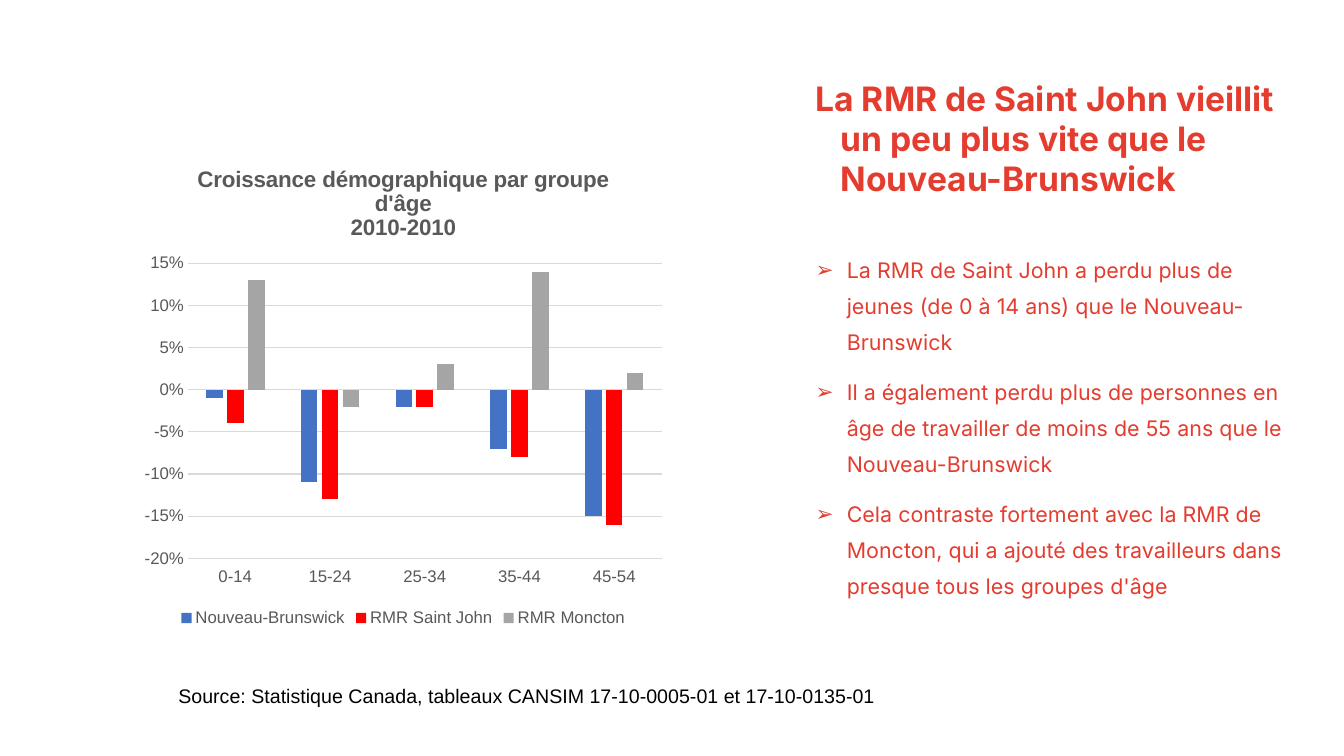
from lxml import etree
from pptx import Presentation
from pptx.chart.data import CategoryChartData
from pptx.dml.color import RGBColor
from pptx.enum import chart as charts
from pptx.oxml.ns import qn
from pptx.util import Inches, Pt

RED = RGBColor(0xE4, 0x3D, 0x30)
BLACK = RGBColor(0, 0, 0)
GREY = RGBColor(0x59, 0x59, 0x59)
LIGHT_GREY = RGBColor(0xD9, 0xD9, 0xD9)

HEADING = "La RMR de Saint John vieillit un peu plus vite que le Nouveau-Brunswick"
POINTS = [
    "La RMR de Saint John a perdu plus de jeunes (de 0 à 14 ans) que le Nouveau-Brunswick",
    "Il a également perdu plus de personnes en âge de travailler de moins de 55 ans que le Nouveau-Brunswick",
    "Cela contraste fortement avec la RMR de Moncton, qui a ajouté des travailleurs dans presque tous les groupes d'âge",
]
SOURCE = "Source: Statistique Canada, tableaux CANSIM 17-10-0005-01 et 17-10-0135-01"
CHART_TITLE = "Croissance démographique par groupe d'âge\n2010-2010"
AGE_GROUPS = ["0-14", "15-24", "25-34", "35-44", "45-54"]
SERIES = [
    ("Nouveau-Brunswick", RGBColor(0x44, 0x72, 0xC4), [-0.01, -0.11, -0.02, -0.07, -0.15]),
    ("RMR Saint John", RGBColor(0xFF, 0, 0), [-0.04, -0.13, -0.02, -0.08, -0.16]),
    ("RMR Moncton", RGBColor(0xA5, 0xA5, 0xA5), [0.13, -0.02, 0.03, 0.14, 0.02]),
]
PLOT_LAYOUT = {"x": 0.1, "y": 0.24, "w": 0.88, "h": 0.61}


def set_font(font, size, color, name="Arial", bold=False):
    font.size, font.name, font.bold = Pt(size), name, bold
    font.color.rgb = color


def add_text(slide, box, paragraphs, size, color, name="Arial", bold=False,
             margin=0, hanging=0, bullet=None, line_spacing=None, gap=0):
    shape = slide.shapes.add_textbox(*map(Inches, box))
    frame = shape.text_frame
    frame.word_wrap = True
    for index, words in enumerate(paragraphs):
        paragraph = frame.paragraphs[0] if index == 0 else frame.add_paragraph()
        properties = paragraph._p.get_or_add_pPr()
        properties.set("marL", str(Inches(margin)))
        properties.set("indent", str(-Inches(hanging)))
        if bullet:
            bullet_color = etree.SubElement(properties, qn("a:buClr"))
            etree.SubElement(bullet_color, qn("a:srgbClr"), val=str(color))
            etree.SubElement(properties, qn("a:buFont"), typeface="Arial")
            etree.SubElement(properties, qn("a:buChar"), char=bullet)
        if line_spacing:
            paragraph.line_spacing = line_spacing
        if index:
            paragraph.space_before = Pt(gap)
        run = paragraph.add_run()
        run.text = words
        set_font(run.font, size, color, name, bold)


def place_plot(chart):
    """Fix the inner plot area as fractions of the chart frame."""
    plot_area = chart._chartSpace.find(".//" + qn("c:plotArea"))
    for layout in plot_area.findall(qn("c:layout")):
        plot_area.remove(layout)
    layout = etree.Element(qn("c:layout"))
    manual = etree.SubElement(layout, qn("c:manualLayout"))
    settings = {"layoutTarget": "inner", "xMode": "edge", "yMode": "edge", **PLOT_LAYOUT}
    for tag, value in settings.items():
        etree.SubElement(manual, qn("c:" + tag), val=str(value))
    plot_area.insert(0, layout)


def add_growth_chart(slide, box):
    data = CategoryChartData(number_format="0%")
    data.categories = AGE_GROUPS
    for name, _, values in SERIES:
        data.add_series(name, values)
    chart = slide.shapes.add_chart(
        charts.XL_CHART_TYPE.COLUMN_CLUSTERED, *map(Inches, box), data).chart
    set_font(chart.font, 10, BLACK)

    chart.has_title = True
    title = chart.chart_title
    title.include_in_layout = False
    title.text_frame.text = CHART_TITLE
    for paragraph in title.text_frame.paragraphs:
        for run in paragraph.runs:
            set_font(run.font, 16, GREY, bold=True)

    chart.has_legend = True
    chart.legend.position = charts.XL_LEGEND_POSITION.BOTTOM
    chart.legend.include_in_layout = False
    set_font(chart.legend.font, 12, GREY)

    plot = chart.plots[0]
    plot.gap_width, plot.overlap = 219, -27
    plot.vary_by_categories = False
    for series, (_, color, _) in zip(plot.series, SERIES):
        series.invert_if_negative = False
        series.format.fill.solid()
        series.format.fill.fore_color.rgb = color

    category_axis, value_axis = chart.category_axis, chart.value_axis
    for axis in (category_axis, value_axis):
        axis.major_tick_mark = axis.minor_tick_mark = charts.XL_TICK_MARK.NONE
        set_font(axis.tick_labels.font, 12, GREY)
    category_axis.tick_label_position = charts.XL_TICK_LABEL_POSITION.LOW
    value_axis.minimum_scale, value_axis.maximum_scale = -0.2, 0.15
    value_axis.major_unit = 0.05
    value_axis.tick_labels.number_format = "0%"
    value_axis.tick_labels.number_format_is_linked = False
    value_axis.format.line.fill.background()
    for line in (category_axis.format.line, value_axis.major_gridlines.format.line):
        line.color.rgb = LIGHT_GREY
        line.width = Pt(0.75)
    place_plot(chart)


def main():
    presentation = Presentation()
    presentation.slide_width, presentation.slide_height = Inches(13.33), Inches(7.5)
    slide = presentation.slides.add_slide(presentation.slide_layouts[6])
    add_text(slide, (7.74, 0.72, 5.09, 1.68), [HEADING], 24, RED, "Inter", bold=True,
             margin=0.5, hanging=0.25)
    add_text(slide, (7.74, 2.4, 5.09, 4.33), POINTS, 15.3, RED, "Inter",
             margin=0.56, hanging=0.31, bullet="➢", line_spacing=1.4, gap=10)
    add_text(slide, (1.67, 6.74, 8.17, 0.34), [SOURCE], 14, BLACK)
    add_growth_chart(slide, (1.33, 1.46, 5.34, 4.8))
    presentation.save("out.pptx")


if __name__ == "__main__":
    main()
